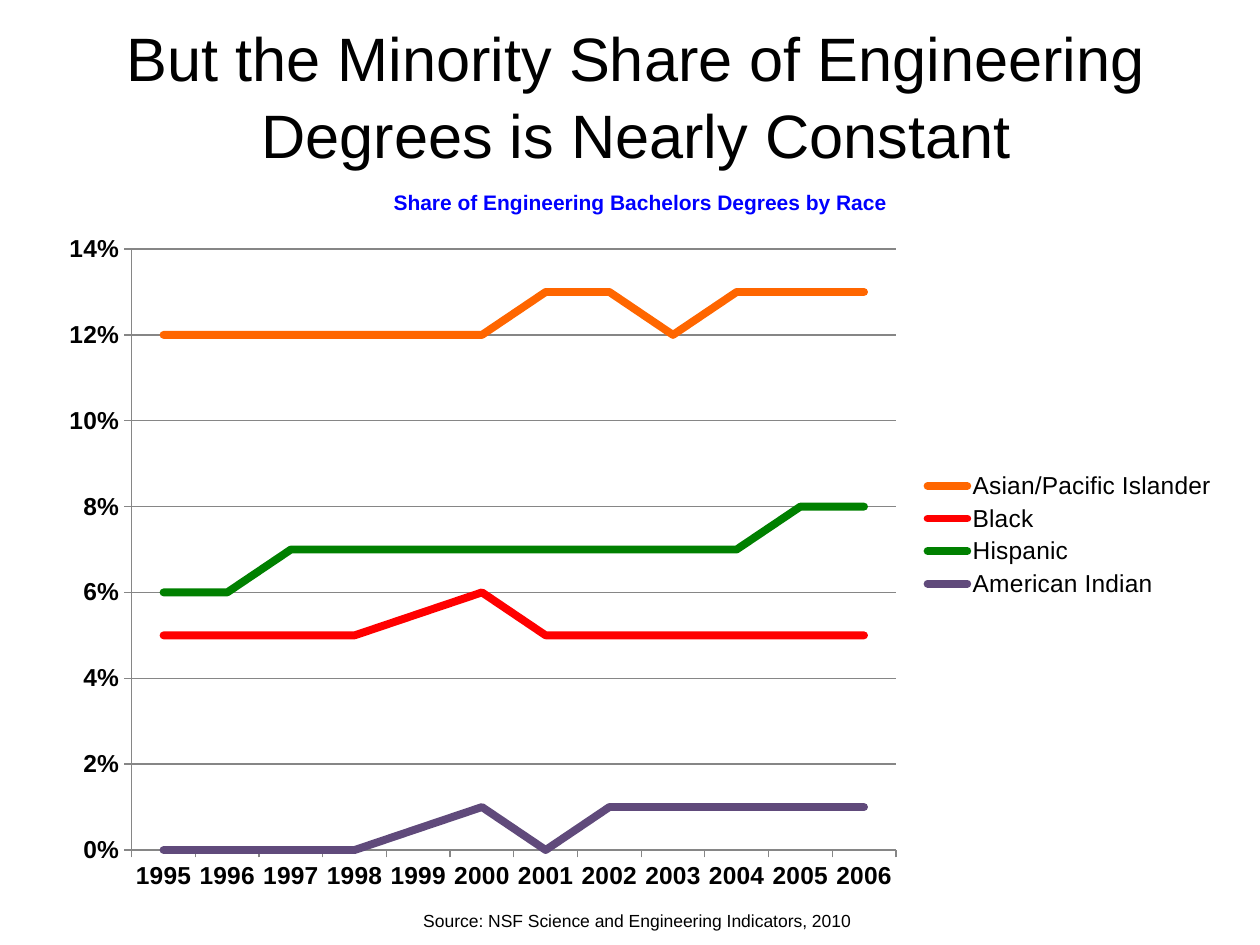
from lxml import etree
from pptx import Presentation
from pptx.chart.data import CategoryChartData
from pptx.dml.color import RGBColor
from pptx.enum import chart as ch, text as tx
from pptx.oxml.ns import qn
from pptx.util import Pt

BLACK = RGBColor(0, 0, 0)
BLUE = RGBColor(0, 0, 255)
GRAY = RGBColor(0x86, 0x86, 0x86)
ORANGE = RGBColor(0xFF, 0x66, 0)
RED = RGBColor(255, 0, 0)
GREEN = RGBColor(0, 0x80, 0)
PURPLE = RGBColor(0x60, 0x4A, 0x7B)


def style(box, lines, size, space):
    frame = box.text_frame
    frame.text = "\n".join(lines)
    frame.word_wrap = False
    frame.auto_size = tx.MSO_AUTO_SIZE.NONE
    frame.vertical_anchor = tx.MSO_ANCHOR.TOP
    for para in frame.paragraphs:
        para.alignment = tx.PP_ALIGN.CENTER
        para.line_spacing = space
        para.space_before = Pt(0)
        para.font.size = Pt(size)
        para.font.name = "Arial"
        para.font.color.rgb = BLACK


def place(node, index, parts):
    for old in node.findall(qn("c:layout")):
        node.remove(old)
    layout = etree.Element(qn("c:layout"))
    manual = etree.SubElement(layout, qn("c:manualLayout"))
    for tag, val in parts:
        etree.SubElement(manual, qn("c:" + tag)).set("val", str(val))
    node.insert(index, layout)


prs = Presentation()
prs.slide_width, prs.slide_height = Pt(720), Pt(540)
slide = prs.slides.add_slide(prs.slide_layouts[5])

rows = [
    ("Asian/Pacific Islander", ORANGE, [12] * 6 + [13, 13, 12, 13, 13, 13]),
    ("Black", RED, [5] * 4 + [5.5, 6] + [5] * 6),
    ("Hispanic", GREEN, [6, 6] + [7] * 8 + [8, 8]),
    ("American Indian", PURPLE, [0] * 4 + [0.5, 1, 0] + [1] * 5),
]
data = CategoryChartData(number_format="0%")
data.categories = [str(year) for year in range(1995, 2007)]
for name, color, vals in rows:
    data.add_series(name, [round(val / 100, 3) for val in vals])

chart = slide.shapes.add_chart(
    ch.XL_CHART_TYPE.LINE, Pt(26.64), Pt(93.6), Pt(676), Pt(424), data
).chart
chart.font.name = "Arial"
chart.font.size = Pt(10)
chart.font.color.rgb = BLACK

chart.has_title = True
head = chart.chart_title
head.text_frame.text = "Share of Engineering Bachelors Degrees by Race"
font = head.text_frame.paragraphs[0].font
font.name, font.size, font.bold = "Arial", Pt(12), True
font.color.rgb = BLUE
head.include_in_layout = False
place(head._element, 1, [
    ("xMode", "edge"), ("yMode", "edge"), ("x", 0.29), ("y", 0.03)])
place(chart._chartSpace.chart.plotArea, 0, [
    ("layoutTarget", "inner"), ("xMode", "edge"), ("yMode", "edge"),
    ("x", 0.072), ("y", 0.115), ("w", 0.646), ("h", 0.81)])

chart.has_legend = True
chart.legend.position = ch.XL_LEGEND_POSITION.RIGHT
chart.legend.include_in_layout = False
chart.legend.font.size = Pt(14)

for axis in (chart.category_axis, chart.value_axis):
    axis.tick_labels.font.size = Pt(14)
    axis.tick_labels.font.bold = True
    axis.major_tick_mark = ch.XL_TICK_MARK.OUTSIDE
    axis.format.line.color.rgb = GRAY
    axis.format.line.width = Pt(0.75)

scale = chart.value_axis
scale.minimum_scale, scale.maximum_scale, scale.major_unit = 0, 0.14, 0.02
scale.tick_labels.number_format = "0%"
scale.tick_labels.number_format_is_linked = False
scale.has_major_gridlines = True
scale.major_gridlines.format.line.color.rgb = GRAY
scale.major_gridlines.format.line.width = Pt(0.75)

chart.plots[0].vary_by_categories = False
for line, (name, color, vals) in zip(chart.plots[0].series, rows):
    line.smooth = False
    line.marker.style = ch.XL_MARKER_STYLE.NONE
    line.format.line.color.rgb = color
    line.format.line.width = Pt(4.5)
    line._element.find(qn("c:spPr")).find(qn("a:ln")).set("cap", "rnd")

title = slide.shapes.title
title.left, title.top, title.width, title.height = Pt(62.64), Pt(5.76), Pt(602), Pt(92)
style(title, ["But the Minority Share of Engineering",
              "Degrees is Nearly Constant"], 35, 1.05)

note = slide.shapes.add_textbox(Pt(233.28), Pt(516.24), Pt(261.36), Pt(19.44))
style(note, ["Source: NSF Science and Engineering Indicators, 2010"], 10, 1.0)

prs.save("out.pptx")
